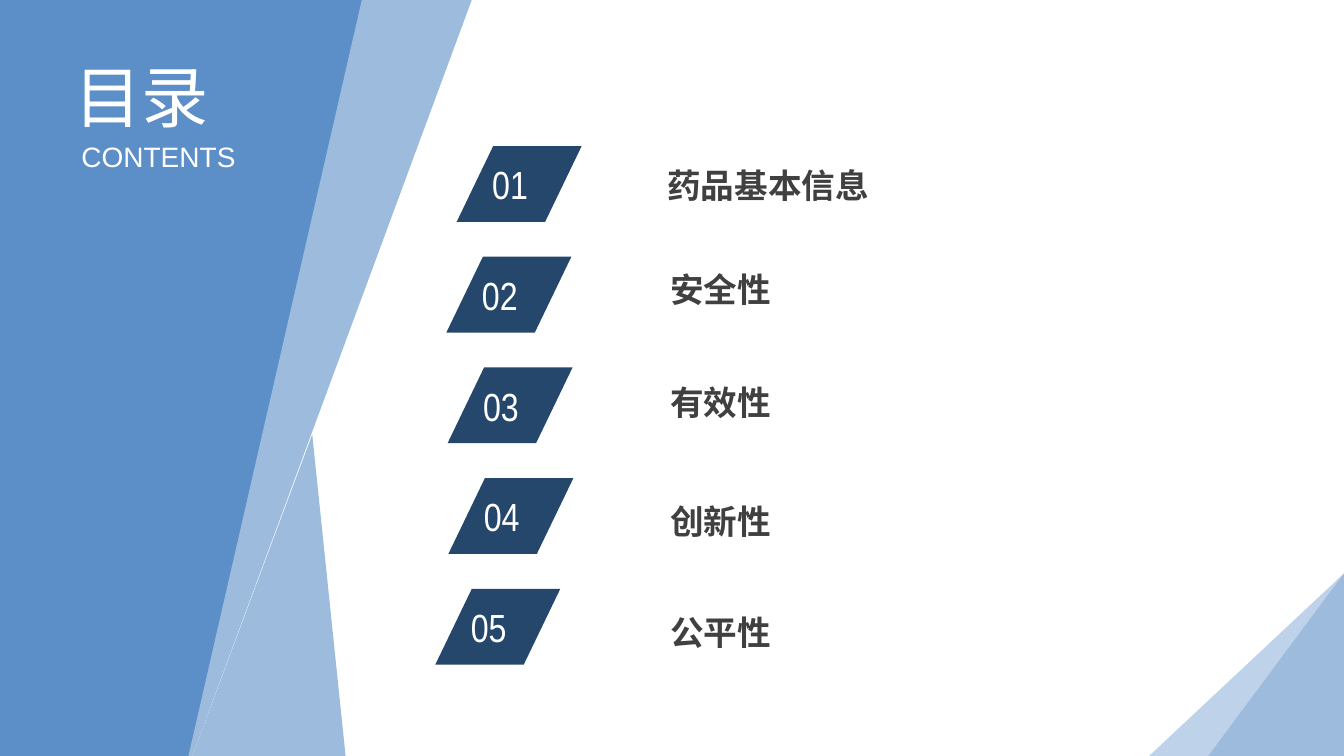
from pptx import Presentation
from pptx.dml.color import RGBColor
from pptx.enum.shapes import MSO_SHAPE
from pptx.enum.text import MSO_ANCHOR, PP_ALIGN
from pptx.oxml.ns import qn
from pptx.util import Cm, Pt
from lxml import etree

PARALLELOGRAM = MSO_SHAPE.PARALLELOGRAM
TRIANGLE = MSO_SHAPE.ISOSCELES_TRIANGLE
TOP, MIDDLE = MSO_ANCHOR.TOP, MSO_ANCHOR.MIDDLE
LEFT = PP_ALIGN.LEFT

COLORS = {
    "panel": "5C8FC7",
    "band": "9DBCDD",
    "pale": "BED2E9",
    "badge": "25476C",
    "label": "404040",
    "white": "FFFFFF",
}
TITLE = {"size": Pt(48), "name": "Arial"}
SUBTITLE = {"size": Pt(20), "name": "Arial"}
NUMBER = {"size": Pt(28), "name": "Arial Narrow"}
LABEL = {"size": Pt(24), "name": "Noto Sans CJK SC", "bold": True}

SLIDE_W, SLIDE_H = 33.87, 19.05
BADGE_W, BADGE_H = 3.15, 1.91
BADGE_STEP = 2.79

# Label, badge left, label left and label top, within the agenda box
AGENDA = [
    ("药品基本信息", 0.54, 5.67, 0.38),
    ("安全性", 0.28, 5.74, 3.0),
    ("有效性", 0.31, 5.74, 5.85),
    ("创新性", 0.33, 5.74, 8.84),
    ("公平性", 0, 5.74, 11.64),
]


def paint(shape, color):
    shape.shadow.inherit = False
    shape.fill.solid()
    shape.fill.fore_color.rgb = RGBColor.from_string(COLORS[color])
    shape.line.fill.background()


def add_polygon(slide, left, top, points, color):
    corners = [(Cm(left + x), Cm(top + y)) for x, y in points]
    builder = slide.shapes.build_freeform(*corners[0], scale=1.0)
    builder.add_line_segments(corners[1:], close=True)
    paint(builder.convert_to_shape(), color)


def write(shape, text, font_values, color, anchor=TOP, wrap=True):
    frame = shape.text_frame
    frame.word_wrap = wrap
    frame.vertical_anchor = anchor
    paragraph = frame.paragraphs[0]
    paragraph.alignment = LEFT
    run = paragraph.add_run()
    run.text = text
    for attribute, value in font_values.items():
        setattr(run.font, attribute, value)
    run.font.color.rgb = RGBColor.from_string(COLORS[color])
    if font_values is LABEL:
        east_asian = etree.SubElement(run.font._element, qn("a:ea"))
        east_asian.set("typeface", font_values["name"])


def add_text(slide, left, top, width, height, *content, **options):
    box = slide.shapes.add_textbox(Cm(left), Cm(top), Cm(width), Cm(height))
    write(box, *content, **options)
    return box


def draw_corner(slide, left, top, width, height):
    # Pale facet behind the right-angled triangle
    add_polygon(slide, left, top,
                [(width, 0), (width - 0.95, height), (0, height)], "pale")
    facet = slide.shapes.add_shape(TRIANGLE, Cm(left + 1.49), Cm(top),
                                   Cm(width - 1.49), Cm(height))
    facet.adjustments[0] = 1
    paint(facet, "band")


def draw_side_panel(slide, left, top, height):
    # Main panel, slanted band and foot
    add_polygon(slide, left, top,
                [(0, 0), (9.19, 0), (4.78, height), (0, height)], "panel")
    add_polygon(slide, left, top,
                [(11.89, 0), (4.85, height), (4.75, height), (9.12, 0)], "band")
    add_polygon(slide, left, top,
                [(7.87, 10.95), (8.71, height), (4.85, height)], "band")
    # Heading
    add_text(slide, left + 1.63, top + 1.27, 3.89, 2.31,
             "目录", TITLE, "white", wrap=False)
    add_text(slide, left + 1.8, top + 3.4, 4.45, 1.12,
             "CONTENTS", SUBTITLE, "white", wrap=False)


def draw_agenda(slide, left, top):
    for index, (label, badge_x, label_x, label_y) in enumerate(AGENDA):
        # Numbered badge
        badge = slide.shapes.add_shape(
            PARALLELOGRAM, Cm(left + badge_x), Cm(top + index * BADGE_STEP),
            Cm(BADGE_W), Cm(BADGE_H))
        badge.adjustments[0] = 0.482
        paint(badge, "badge")
        write(badge, f"{index + 1:02d}", NUMBER, "white", anchor=MIDDLE)
        # Topic
        topic = add_text(slide, left + label_x, top + label_y, 10.52, 1.22,
                         label, LABEL, "label")
        frame = topic.text_frame
        frame.margin_left = frame.margin_right = Cm(0.18)
        frame.margin_top = frame.margin_bottom = Cm(0.1)


def main():
    deck = Presentation()
    deck.slide_width, deck.slide_height = Cm(SLIDE_W), Cm(SLIDE_H)
    slide = deck.slides.add_slide(deck.slide_layouts[6])
    draw_corner(slide, SLIDE_W - 4.91, SLIDE_H - 4.6, 4.91, 4.6)
    draw_side_panel(slide, 0, 0, SLIDE_H)
    draw_agenda(slide, 10.97, 3.68)
    deck.save("out.pptx")


if __name__ == "__main__":
    main()
